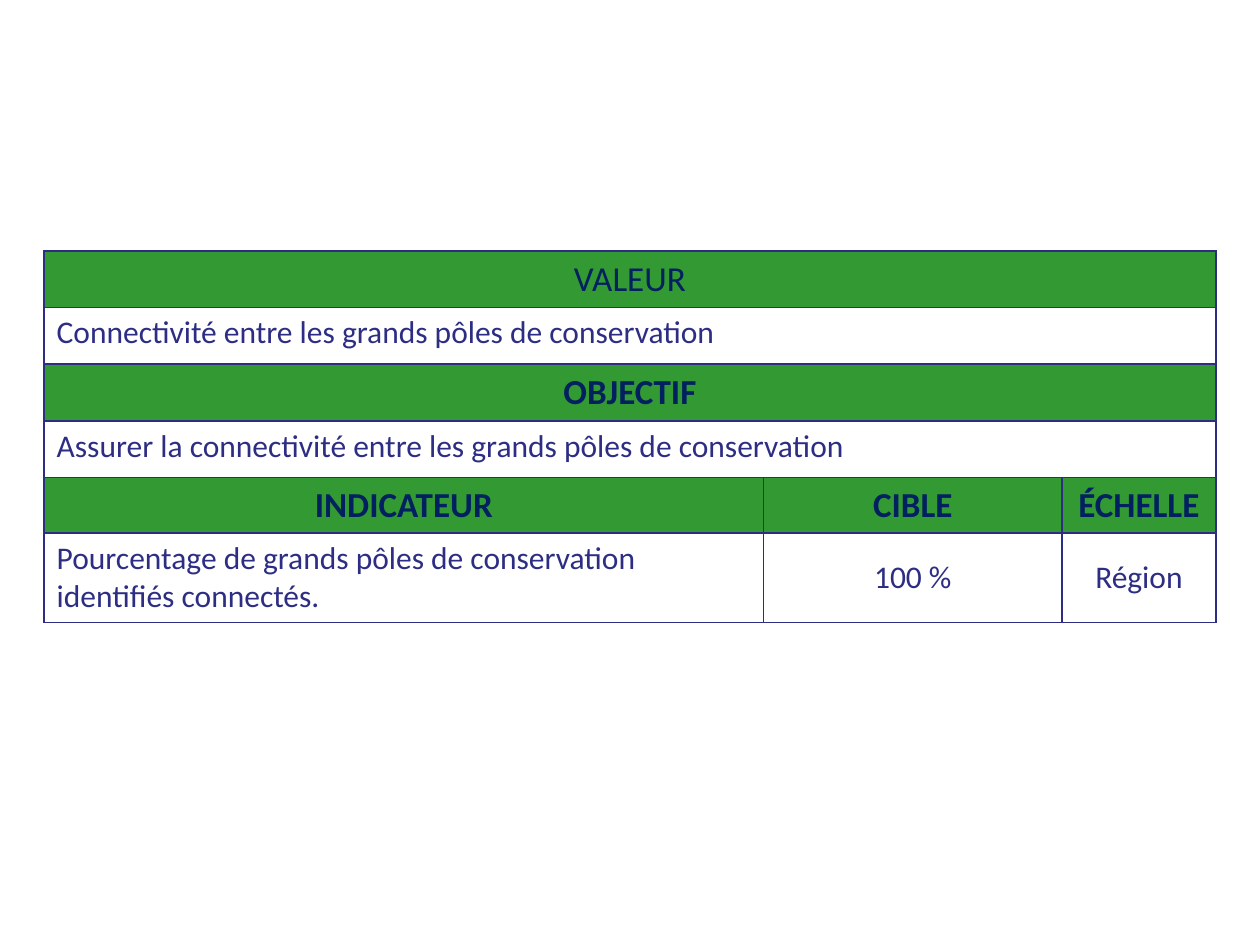
"""Build a one-table slide of value, objective and indicator for connectivity."""
from dataclasses import dataclass

from lxml import etree
from pptx import Presentation
from pptx.dml.color import RGBColor
from pptx.enum.text import MSO_ANCHOR, PP_ALIGN
from pptx.oxml.ns import qn
from pptx.util import Inches, Pt

LEFT, CENTER = PP_ALIGN.LEFT, PP_ALIGN.CENTER
TOP, MIDDLE = MSO_ANCHOR.TOP, MSO_ANCHOR.MIDDLE


@dataclass(frozen=True)
class Theme:
    font: str = "Calibri"
    heading_size: int = 20
    body_size: int = 18
    heading_color: str = "002060"
    body_color: str = "2D2E83"
    heading_fill: str = "339933"
    body_fill: str = "FFFFFF"
    border_color: str = "2D2E83"
    border_width: int = 1


THEME = Theme()
COLUMN_WIDTHS = (5.71, 2.37, 1.22)
ROW_HEIGHTS = (0.45, 0.45, 0.45, 0.45, 0.44, 0.7)


def add_borders(cell):
    properties = cell._tc.get_or_add_tcPr()
    for side in ("a:lnL", "a:lnR", "a:lnT", "a:lnB"):
        line = etree.SubElement(properties, qn(side), w=str(Pt(THEME.border_width)))
        fill = etree.SubElement(line, qn("a:solidFill"))
        etree.SubElement(fill, qn("a:srgbClr"), val=THEME.border_color)


def write_cell(cell, text, fill, color, size, bold, align, anchor):
    cell.text_frame.text = text
    cell.vertical_anchor = anchor
    cell.fill.solid()
    cell.fill.fore_color.rgb = RGBColor.from_string(fill)
    para = cell.text_frame.paragraphs[0]
    para.alignment = align
    for span in para.runs:
        span.font.name = THEME.font
        span.font.size = Pt(size)
        span.font.bold = bold
        span.font.color.rgb = RGBColor.from_string(color)


def write_heading(cell, text, bold=True, anchor=MIDDLE):
    write_cell(cell, text, THEME.heading_fill, THEME.heading_color,
               THEME.heading_size, bold, CENTER, anchor)


def write_body(cell, text, align=LEFT, anchor=MIDDLE):
    write_cell(cell, text, THEME.body_fill, THEME.body_color,
               THEME.body_size, False, align, anchor)


def add_grid(page):
    frame = page.shapes.add_table(
        len(ROW_HEIGHTS), len(COLUMN_WIDTHS), Inches(0.35), Inches(1.99),
        Inches(sum(COLUMN_WIDTHS)), Inches(sum(ROW_HEIGHTS)))
    table = frame.table
    table.first_row = table.horz_banding = False
    for column, width in zip(table.columns, COLUMN_WIDTHS):
        column.width = Inches(width)
    for row, height in zip(table.rows, ROW_HEIGHTS):
        row.height = Inches(height)
    for cell in table.iter_cells():
        add_borders(cell)
    for row in range(4):
        table.cell(row, 0).merge(table.cell(row, len(COLUMN_WIDTHS) - 1))
    return table


def main():
    deck = Presentation()
    deck.slide_width, deck.slide_height = Inches(10), Inches(7.5)
    page = deck.slides.add_slide(deck.slide_layouts[6])
    table = add_grid(page)

    write_heading(table.cell(0, 0), "VALEUR", bold=False)
    write_body(table.cell(1, 0),
               "Connectivité entre les grands pôles de conservation", anchor=TOP)
    write_heading(table.cell(2, 0), "OBJECTIF")
    write_body(table.cell(3, 0),
               "Assurer la connectivité entre les grands pôles de conservation",
               anchor=TOP)

    indicator = (
        ("INDICATEUR",
         "Pourcentage de grands pôles de conservation identifiés connectés.", LEFT),
        ("CIBLE", "100 %", CENTER),
        ("ÉCHELLE", "Région", CENTER),
    )
    for column, (heading, text, align) in enumerate(indicator):
        write_heading(table.cell(4, column), heading, anchor=TOP)
        write_body(table.cell(5, column), text, align)

    deck.save("out.pptx")


if __name__ == "__main__":
    main()
